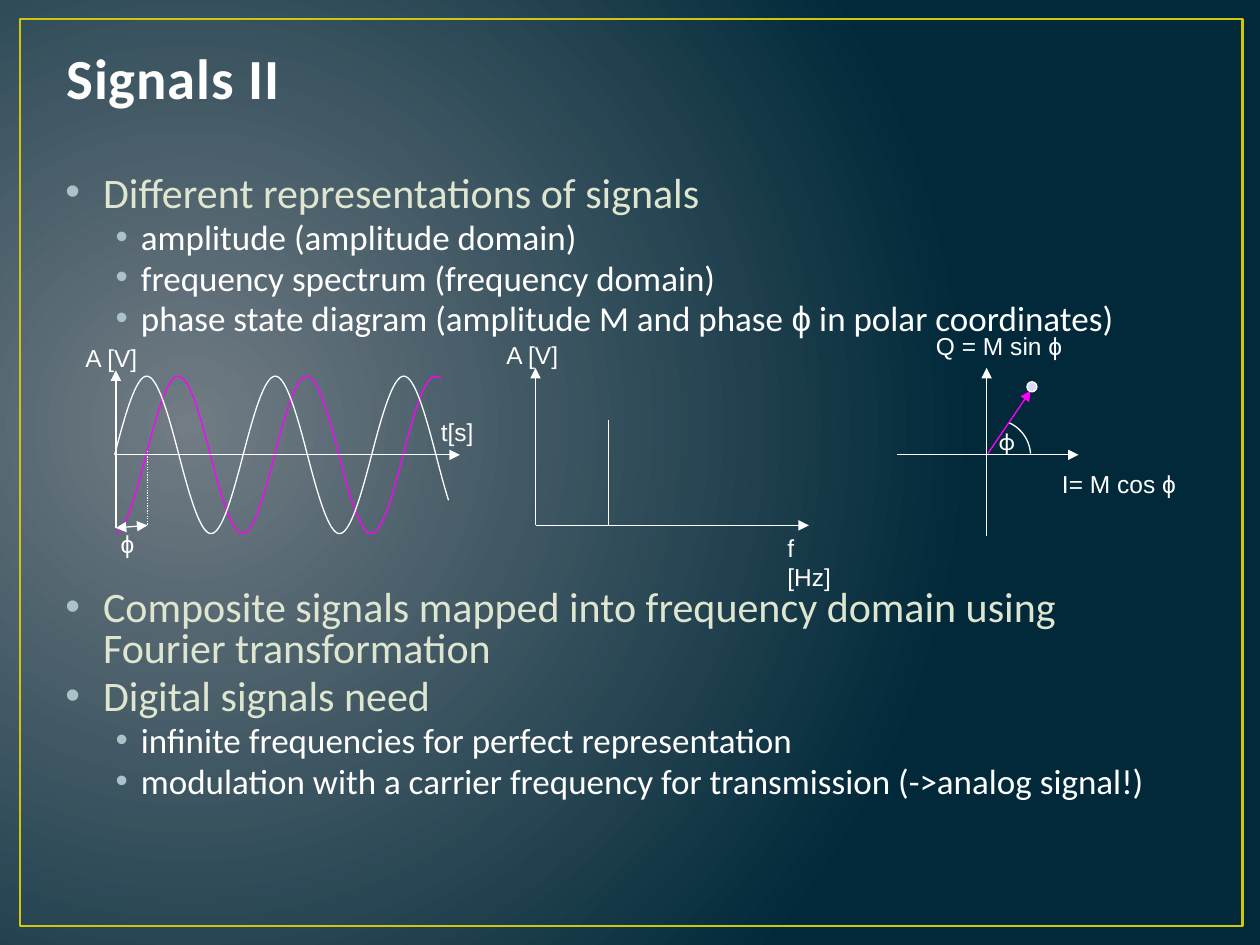
from dataclasses import dataclass
from math import ceil, cos, pi, radians, sin
from typing import Callable

from lxml.etree import SubElement
from pptx import Presentation
from pptx.dml.color import RGBColor
from pptx.enum.dml import MSO_LINE_DASH_STYLE as Dash
from pptx.enum.shapes import MSO_CONNECTOR as Connector, MSO_SHAPE as Shape
from pptx.enum.text import MSO_ANCHOR as Anchor, MSO_AUTO_SIZE as AutoSize
from pptx.oxml.ns import qn
from pptx.util import Inches, Pt

COLORS = {
    "glow": "717C84", "night": "01293A", "frame": "CFC60D", "title": "FEFEFE",
    "topic": "DFE6D0", "bullet": "ACC2C9", "white": "FFFFFF",
    "magenta": "FF00FF", "dot": "DADAF6",
}
Pair = tuple[float, float]


@dataclass
class Point:
    text: str
    level: int = 0
    before: float = 0


@dataclass
class Label:
    text: str
    left: float
    top: float
    width: float
    font: str = "Arial"


@dataclass
class Line:
    start: Pair
    end: Pair
    color: str = "white"
    head: bool = False
    tail: bool = True
    dash: Dash | None = None


@dataclass
class Wave:
    color: str
    zero: float
    middle: float
    first: float
    last: float


@dataclass
class Level:
    size: float
    color: str
    indent: float
    hanging: float


LEVELS = [Level(24, "topic", 0.3, 0.3), Level(20, "white", 0.6, 0.2)]
DIAGRAM_GAP = 144
POINTS = [
    Point("Different representations of signals"),
    Point("amplitude (amplitude domain)", 1, 4),
    Point("frequency spectrum (frequency domain)", 1, 4),
    Point("phase state diagram (amplitude M and phase ϕ in polar coordinates)", 1, 4),
    Point("Composite signals mapped into frequency domain using Fourier transformation",
          0, DIAGRAM_GAP),
    Point("Digital signals need", 0, 4.8),
    Point("infinite frequencies for perfect representation", 1, 4),
    Point("modulation with a carrier frequency for transmission (->analog signal!)", 1, 4),
]
LABELS = [
    Label("A [V]", 0.58, 2.67, 0.62),
    Label("t[s]", 3.4, 3.26, 0.46),
    Label("ϕ", 0.86, 4.15, 0.33),
    Label("A [V]", 3.92, 2.65, 0.62),
    Label("f [Hz]", 6.15, 4.18, 0.65),
    Label("Q = M sin ϕ", 7.33, 2.58, 1.21),
    Label("I= M cos ϕ", 8.33, 3.67, 1.11),
    Label("ϕ", 7.83, 3.33, 0.33, "Calibri"),
]
LINES = [
    Line((0.92, 4.19), (0.92, 2.94)),
    Line((0.91, 3.61), (3.65, 3.61)),
    Line((1.17, 3.58), (1.17, 4.17), tail=False, dash=Dash.ROUND_DOT),
    Line((0.92, 4.19), (1.17, 4.17), head=True),
    Line((4.25, 4.17), (4.25, 2.92)),
    Line((4.25, 4.17), (6.42, 4.17)),
    Line((4.83, 4.17), (4.83, 3.33), tail=False),
    Line((7.83, 4.25), (7.83, 2.92)),
    Line((7.12, 3.61), (8.56, 3.61)),
    Line((7.84, 3.6), (8.18, 3.1), "magenta"),
]
PERIOD, AMPLITUDE = 1.02, 0.625
WAVES = [
    Wave("magenta", 1.16, 3.61, 0.92, 3.5),
    Wave("white", 0.91, 3.61, 0.91, 3.56),
]
ARC_CENTER, ARC_RADIUS = (7.89, 3.62), 0.29


def rgb(name: str) -> RGBColor:
    """Look up a named colour."""
    return RGBColor.from_string(COLORS[name])


def write(paragraph, text: str, *, size: float, color: str, font: str = "Calibri",
          bold: bool = False, spacing: float = 0) -> None:
    """Add a formatted run to a paragraph."""
    run = paragraph.add_run()
    run.text = text
    run.font.size, run.font.name, run.font.bold = Pt(size), font, bold
    run.font.color.rgb = rgb(color)
    if spacing:
        run.font._element.set("spc", str(int(spacing * 100)))


def add_frame(slide, left: float, top: float, width: float, height: float, wrap: bool):
    """Add an empty text box and return its text frame."""
    frame = slide.shapes.add_textbox(*map(Inches, (left, top, width, height))).text_frame
    frame.word_wrap = wrap
    return frame


def stroke(line, color: str, width: float = 0.75) -> None:
    """Set the colour and width of a line."""
    line.color.rgb = rgb(color)
    line.width = Pt(width)


def paint_background(slide) -> None:
    """Fill the background with a radial gradient."""
    fill = slide.background.fill
    fill.gradient()
    for stop, color in zip(fill.gradient_stops, ("glow", "night")):
        stop.color.rgb = rgb(color)
    gradient = slide._element.find(".//" + qn("a:gradFill"))
    gradient.remove(gradient.find(qn("a:lin")))
    circle = SubElement(gradient, qn("a:path"), {"path": "circle"})
    SubElement(circle, qn("a:fillToRect"), {"l": "15000", "t": "50000", "r": "85000", "b": "60000"})


def add_preset(slide, kind: Shape, box: tuple, fill: str | None, color: str, width: float) -> None:
    """Draw an outlined preset shape."""
    shape = slide.shapes.add_shape(kind, *map(Inches, box))
    shape.shadow.inherit = False
    if fill:
        shape.fill.solid()
        shape.fill.fore_color.rgb = rgb(fill)
    else:
        shape.fill.background()
    stroke(shape.line, color, width)


def add_point(paragraph, point: Point) -> None:
    """Write one bulleted paragraph."""
    level = LEVELS[point.level]
    paragraph.level = point.level
    paragraph.line_spacing = 0.8
    paragraph.space_before = Pt(point.before)
    props = paragraph._p.get_or_add_pPr()
    props.set("marL", str(Inches(level.indent)))
    props.set("indent", str(-Inches(level.hanging)))
    SubElement(SubElement(props, qn("a:buClr")), qn("a:srgbClr"), {"val": COLORS["bullet"]})
    SubElement(props, qn("a:buFont"), {"typeface": "Arial"})
    SubElement(props, qn("a:buChar"), {"char": "•"})
    before, phi, after = point.text.partition("ϕ")
    for text, font in ((before, "Calibri"), (phi, "Arial"), (after, "Calibri")):
        if text:
            write(paragraph, text, size=level.size, color=level.color, font=font)


def add_line(slide, line: Line) -> None:
    """Draw a straight line with optional arrowheads."""
    connector = slide.shapes.add_connector(
        Connector.STRAIGHT, *map(Inches, (*line.start, *line.end)))
    stroke(connector.line, line.color)
    if line.dash:
        connector.line.dash_style = line.dash
    outline = connector.line._get_or_add_ln()
    for tag, shown in (("a:headEnd", line.head), ("a:tailEnd", line.tail)):
        if shown:
            SubElement(outline, qn(tag), {"type": "triangle"})
    SubElement(connector._element.spPr, qn("a:effectLst"))


def add_curve(slide, knots: list[float], place: Callable[[float], Pair],
              slope: Callable[[float], Pair], color: str) -> None:
    """Draw an open curve as cubic segments between parameter knots."""
    handles = []
    for a, b in zip(knots, knots[1:]):
        third = (b - a) / 3
        (ax, ay), (bx, by) = place(a), place(b)
        (adx, ady), (bdx, bdy) = slope(a), slope(b)
        handles += [(ax + adx * third, ay + ady * third),
                    (bx - bdx * third, by - bdy * third), (bx, by)]
    builder = slide.shapes.build_freeform(*map(Inches, place(knots[0])))
    builder.add_line_segments([tuple(map(Inches, p)) for p in handles], close=False)
    curve = builder.convert_to_shape()
    outline = curve._element.find(".//" + qn("a:path"))
    segments = outline.findall(qn("a:lnTo"))
    for i in range(0, len(segments), 3):
        cubic = SubElement(outline, qn("a:cubicBezTo"))
        for segment in segments[i:i + 3]:
            cubic.append(segment[0])
            outline.remove(segment)
    curve.shadow.inherit = False
    curve.fill.background()
    stroke(curve.line, color)


def add_wave(slide, wave: Wave) -> None:
    """Draw a sine wave with knots at its peaks and zero crossings."""
    quarter, turn = PERIOD / 4, 2 * pi / PERIOD
    start = ceil((wave.first - wave.zero) / quarter + 0.01)
    stop = ceil((wave.last - wave.zero) / quarter)
    inner = [wave.zero + quarter * i for i in range(start, stop)]
    add_curve(slide, [wave.first, *inner, wave.last],
              lambda x: (x, wave.middle - AMPLITUDE * sin(turn * (x - wave.zero))),
              lambda x: (1, -AMPLITUDE * turn * cos(turn * (x - wave.zero))), wave.color)


def add_phase_arc(slide) -> None:
    """Draw the arc that marks the phase angle."""
    x, y = ARC_CENTER
    add_curve(slide, [radians(angle) for angle in (4, 25, 46, 66)],
              lambda t: (x + ARC_RADIUS * cos(t), y - ARC_RADIUS * sin(t)),
              lambda t: (-ARC_RADIUS * sin(t), -ARC_RADIUS * cos(t)), "white")


def main() -> None:
    """Build the signals slide."""
    deck = Presentation()
    deck.slide_width, deck.slide_height = Inches(10), Inches(7.5)
    slide = deck.slides.add_slide(deck.slide_layouts[6])
    paint_background(slide)
    add_preset(slide, Shape.RECTANGLE, (0.16, 0.15, 9.7, 7.2), None, "frame", 1.5)
    body = add_frame(slide, 0.42, 1.35, 8.83, 5.58, True)
    for index, point in enumerate(POINTS):
        add_point(body.add_paragraph() if index else body.paragraphs[0], point)
    title = add_frame(slide, 0.43, 0.29, 2.69, 0.64, True)
    title.vertical_anchor = Anchor.BOTTOM
    write(title.paragraphs[0], "Signals II", size=32.4, color="title", bold=True, spacing=0.5)
    for wave in WAVES:
        add_wave(slide, wave)
    add_phase_arc(slide)
    for line in LINES:
        add_line(slide, line)
    add_preset(slide, Shape.OVAL, (8.15, 3.03, 0.08, 0.08), "dot", "white", 0.75)
    for label in LABELS:
        frame = add_frame(slide, label.left, label.top, label.width, 0.33, False)
        frame.auto_size = AutoSize.SHAPE_TO_FIT_TEXT
        write(frame.paragraphs[0], label.text, size=14, color="white", font=label.font)
    deck.save("out.pptx")


if __name__ == "__main__":
    main()
